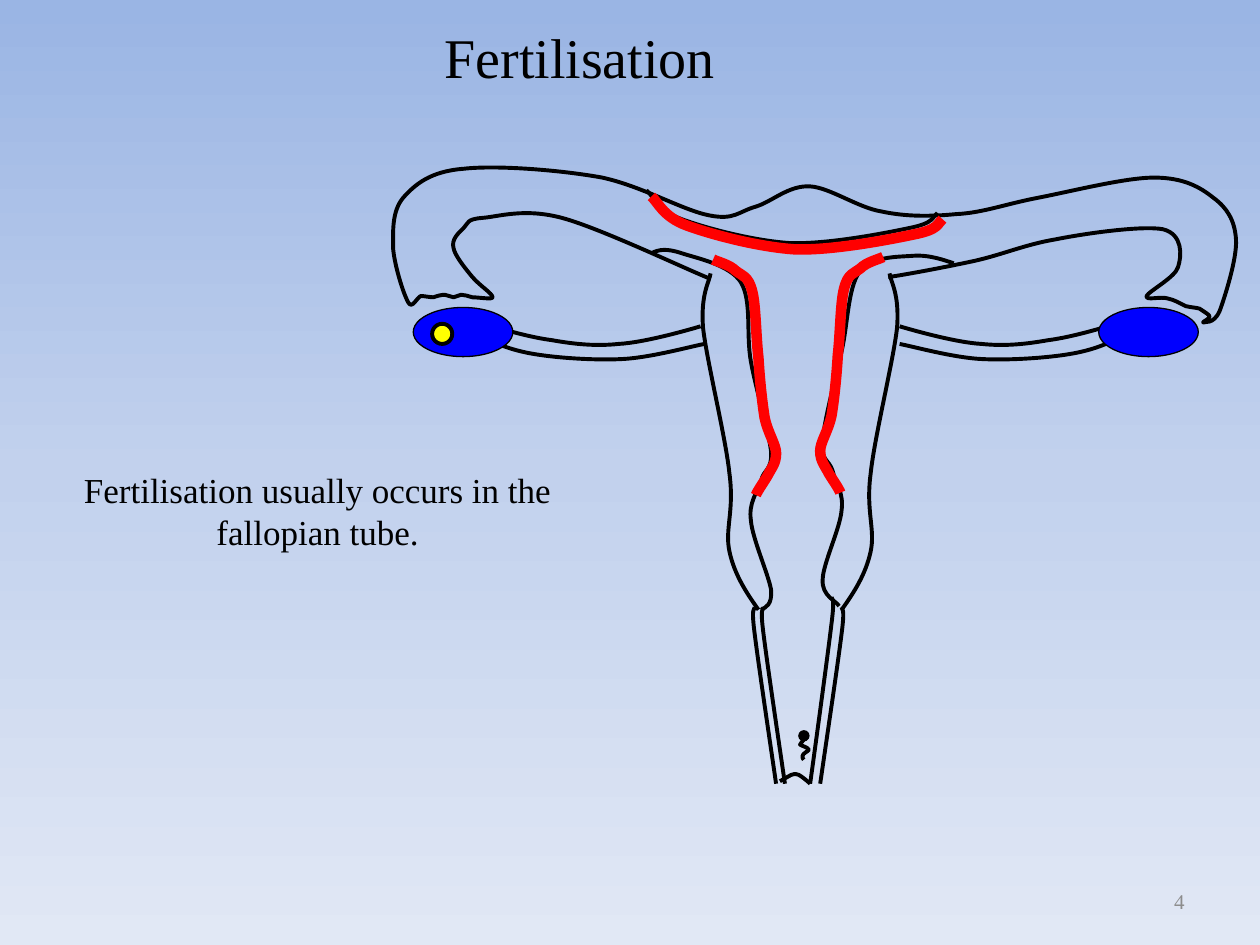
from copy import deepcopy
from math import cos, radians, sin

from lxml.etree import SubElement
from pptx import Presentation
from pptx.dml.color import RGBColor
from pptx.enum.shapes import MSO_SHAPE
from pptx.enum.text import MSO_ANCHOR, PP_ALIGN
from pptx.oxml.ns import qn
from pptx.util import Cm, Pt

OVAL = MSO_SHAPE.OVAL
TOP, MIDDLE = MSO_ANCHOR.TOP, MSO_ANCHOR.MIDDLE
LEFT, CENTER, RIGHT = PP_ALIGN.LEFT, PP_ALIGN.CENTER, PP_ALIGN.RIGHT
FONT = "Times New Roman"
HEX = {"ink": "000000", "ovary": "0000FF", "egg": "FFFF00", "lining": "FF0000",
       "page": "8C8C8C", "sky": "9AB5E4", "mist": "C2D1ED", "haze": "E1E8F5"}
UNITS = 700  # width of the anatomy box in drawing units

# Curves: start point, then three points per Bezier segment, as x, y pairs
TUBES = (
    263, 121, 243, 113, 176, 81, 146, 73, 116, 65, 96, 72, 83, 73,
    70, 74, 72, 77, 68, 81, 64, 85, 58, 90, 60, 97, 61, 103, 70, 114, 75, 120,
    81, 127, 91, 133, 91, 136, 91, 138, 80, 136, 75, 136, 71, 135, 69, 134, 66, 134,
    64, 134, 62, 136, 60, 136, 57, 136, 56, 134, 53, 134, 50, 134, 47, 135, 44, 136,
    41, 136, 37, 135, 34, 135, 31, 136, 27, 146, 24, 140, 20, 133, 13, 110, 12, 97,
    12, 83, 11, 68, 20, 57, 29, 47, 41, 36, 68, 34, 94, 31, 145, 35, 178, 41,
    210, 48, 242, 67, 263, 71, 283, 75, 286, 68, 300, 64, 313, 60, 326, 47, 343, 48,
    359, 49, 381, 65, 400, 68, 419, 72, 438, 72, 459, 70, 480, 69, 498, 62, 524, 57,
    550, 52, 593, 41, 616, 41, 640, 41, 653, 49, 663, 57, 674, 65, 680, 75, 681, 90,
    682, 105, 672, 136, 668, 147, 663, 158, 656, 155, 655, 156,
    653, 156, 661, 153, 660, 151, 660, 150, 655, 147, 652, 145,
    648, 144, 645, 144, 641, 143, 637, 141, 632, 138, 627, 137,
    621, 135, 609, 139, 610, 135, 612, 131, 633, 120, 635, 112,
    638, 103, 639, 86, 623, 82, 607, 79, 563, 85, 538, 90,
    514, 94, 496, 102, 474, 107, 451, 112, 419, 118, 405, 120)
WALL = (302, 384, 292, 370, 283, 356, 279, 338, 275, 320, 283, 306, 279, 276,
        276, 247, 261, 187, 258, 160, 256, 133, 263, 124, 264, 117)
CANAL = (316, 522, 309, 474, 302, 427, 299, 403, 296, 380, 299, 385, 299, 382)
UPPER = (256, 159, 246, 162, 211, 172, 191, 173, 172, 175, 155, 173, 138, 170,
         122, 168, 101, 162, 91, 159)
LOWER = (259, 173, 248, 175, 216, 184, 193, 185, 171, 186, 142, 184, 124, 181,
         106, 178, 94, 173, 83, 167)
INNER_L = (304, 384, 308, 382, 313, 380, 312, 368, 310, 356, 297, 327, 296, 313,
           294, 299, 301, 291, 304, 282, 306, 272, 313, 274, 312, 258,
           310, 242, 300, 209, 296, 187, 292, 165, 297, 139, 288, 124,
           279, 110, 253, 105, 241, 101, 229, 97, 223, 98, 217, 101)
INNER_R = (366, 381, 364, 377, 352, 373, 353, 360, 353, 348, 367, 319, 368, 305,
           370, 291, 363, 283, 361, 274, 358, 264, 351, 266, 353, 250,
           354, 234, 363, 201, 368, 179, 373, 157, 373, 129, 382, 116,
           392, 103, 413, 104, 425, 103, 438, 102, 451, 107, 457, 109)
DOME = (213, 51, 218, 55, 222, 67, 241, 74, 260, 81, 297, 91, 327, 93,
        357, 94, 403, 85, 422, 81, 442, 77, 440, 72, 444, 69)
LINING = (300, 293, 301, 290, 306, 283, 309, 278, 312, 272, 316, 268, 316, 260,
          316, 253, 310, 245, 307, 232, 305, 220, 303, 201, 302, 184,
          300, 167, 300, 142, 297, 131, 294, 119, 289, 119, 284, 115,
          279, 110, 270, 108, 266, 106)
DUCT = (343, 522, 346, 501, 357, 420, 360, 395, 363, 371, 360, 377, 360, 374)
MOUTH = (319, 520, 321, 519, 326, 516, 328, 515, 330, 514, 331, 514, 334, 515,
         336, 516, 341, 520, 343, 522)
TAIL = (338, 487, 337, 489, 335, 490, 335, 491, 336, 492, 341, 493, 342, 495,
        342, 496, 337, 498, 337, 500, 336, 501, 338, 503, 338, 503)


def color(name):
    return RGBColor.from_string(HEX[name])


def pairs(flat):
    return list(zip(flat[::2], flat[1::2]))


def move(flat, dx, dy):
    return [n for x, y in pairs(flat) for n in (x + dx, y + dy)]


def flip(flat, total, dy=0):
    """Mirror left to right; total is the sum of both x values."""
    return [n for x, y in pairs(flat) for n in (total - x, y + dy)]


def turn(flat, angle, mid):
    c, s = cos(radians(angle)), sin(radians(angle))
    offs = [(x - mid[0], y - mid[1]) for x, y in pairs(flat)]
    return [n for x, y in offs
            for n in (mid[0] + x * c - y * s, mid[1] + x * s + y * c)]


def curve(shapes, box, flat, name="ink", width=2.25):
    unit = box[2] / UNITS
    spots = [(Cm(box[0] + x * unit), Cm(box[1] + y * unit)) for x, y in pairs(flat)]
    form = shapes.build_freeform(*spots[0], scale=1.0)
    form.add_line_segments(spots[1:], close=False)
    shape = form.convert_to_shape()
    # Join each three straight steps into one Bezier segment
    route = shape._element.xpath(".//a:path")[0]
    steps = route.findall(qn("a:lnTo"))
    for i in range(0, len(steps), 3):
        cubic = SubElement(route, qn("a:cubicBezTo"))
        for step in steps[i:i + 3]:
            cubic.append(step[0])
            route.remove(step)
    shape.shadow.inherit = False
    shape.fill.background()
    shape.line.color.rgb = color(name)
    shape.line.width = Pt(width)
    return shape


def oval(shapes, box, x, y, w, h, name, width=0.75):
    unit = box[2] / UNITS
    shape = shapes.add_shape(OVAL, Cm(box[0] + x * unit), Cm(box[1] + y * unit),
                             Cm(w * unit), Cm(h * unit))
    shape.shadow.inherit = False
    shape.fill.solid()
    shape.fill.fore_color.rgb = color(name)
    shape.line.color.rgb = color("ink")
    shape.line.width = Pt(width)


def organs(slide, box):
    shapes = slide.shapes.add_group_shape().shapes
    # Outer walls and tubes
    for flat in (TUBES, CANAL, flip(CANAL, 667)):
        curve(shapes, box, flat)
    for flat, angle, mid in ((WALL, 7.3, (280, 250)), (flip(WALL, 670), -7.3, (390, 250))):
        curve(shapes, box, turn(flat, -angle, mid)).rotation = angle
    # Ligaments and ovaries
    for upper, lower, left in ((UPPER, LOWER, 28), (flip(UPPER, 670), flip(LOWER, 673), 572)):
        curve(shapes, box, upper)
        curve(shapes, box, lower)
        oval(shapes, box, left, 144, 79, 39, "ovary")
    # Cavity and its lining
    for flat in (INNER_L, INNER_R, DOME):
        curve(shapes, box, flat)
    for flat in (LINING, flip(LINING, 667, -2), move(DOME, 4, 5)):
        curve(shapes, box, flat, "lining", 6)
    # Lower passage
    for flat in (move(CANAL, 7, 0), DUCT, MOUTH):
        curve(shapes, box, flat)


def cells(slide, box):
    oval(slide.shapes, box, 43, 157, 16, 16, "egg", 2.25)
    sperm = slide.shapes.add_group_shape().shapes
    oval(sperm, box, 334, 480, 8, 8, "ink")
    curve(sperm, box, TAIL)


def label(slide, box, text, size, align=LEFT, name="ink", anchor=TOP):
    frame = slide.shapes.add_textbox(*map(Cm, box)).text_frame
    frame.word_wrap = True
    frame.vertical_anchor = anchor
    para = frame.paragraphs[0]
    para.text = text
    para.alignment = align
    para.font.name = FONT
    para.font.size = Pt(size)
    para.font.color.rgb = color(name)


def backdrop(slide):
    fill = slide.background.fill
    fill.gradient()
    fill.gradient_angle = 270
    stops = slide._element.xpath(".//a:gsLst")[0]
    stops.insert(1, deepcopy(stops[0]))
    for stop, name, place in zip(fill.gradient_stops, ("sky", "mist", "haze"), (0, 0.5, 1)):
        stop.color.rgb = color(name)
        stop.position = place


def main():
    deck = Presentation()
    deck.slide_width, deck.slide_height = Cm(25.4), Cm(19.05)
    slide = deck.slides.add_slide(deck.slide_layouts[6])
    backdrop(slide)
    body = (7.62, 2.54, 17.78, 13.5)
    organs(slide, body)
    cells(slide, body)
    label(slide, (8.71, 0.33, 7.29, 1.6), "Fertilisation", 32)
    label(slide, (1.3, 9.32, 10.21, 1.96),
          "Fertilisation usually occurs in the fallopian tube.", 20, CENTER)
    label(slide, (18.21, 17.65, 5.92, 1.02), "4", 12, RIGHT, "page", MIDDLE)
    deck.save("out.pptx")


if __name__ == "__main__":
    main()
